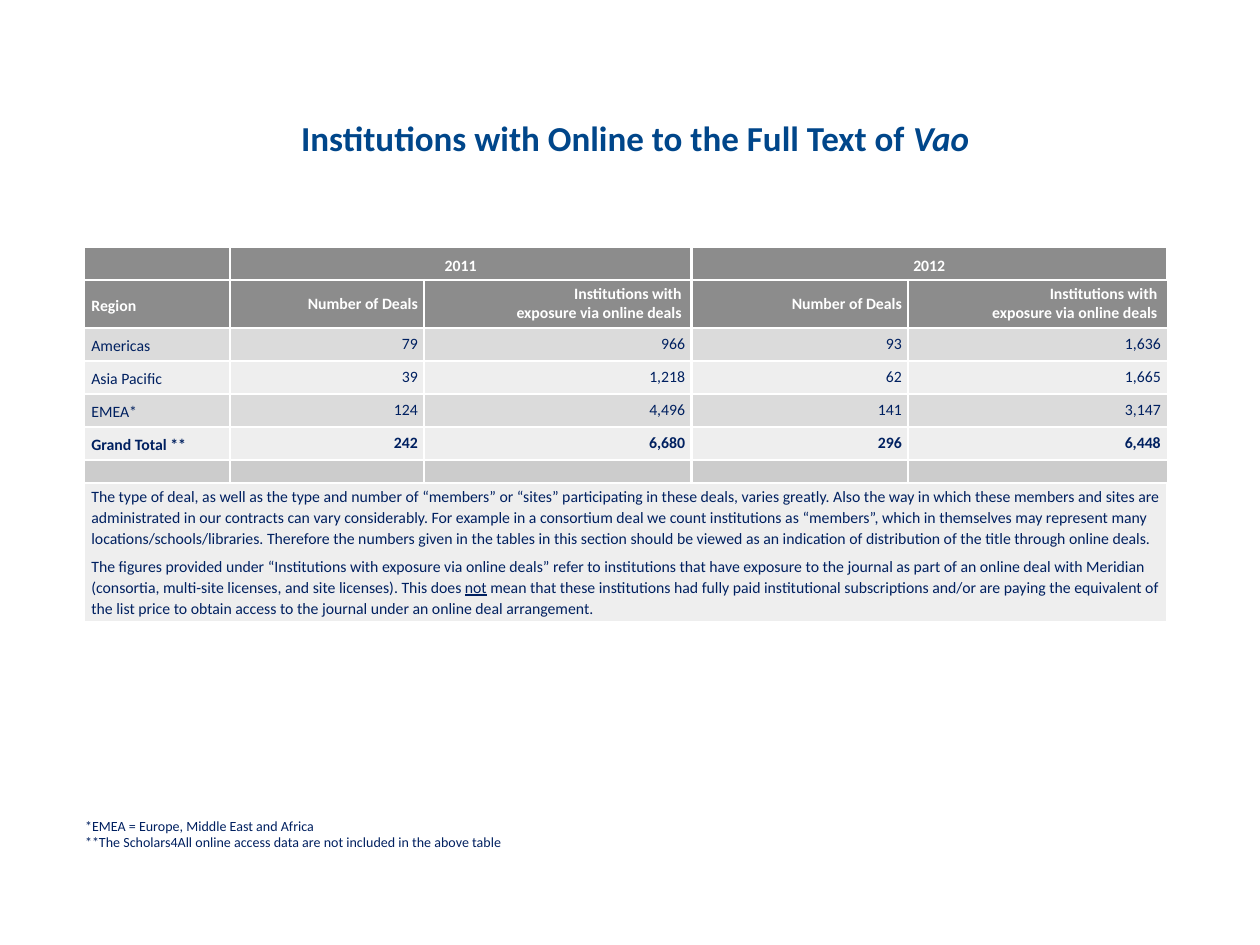
from lxml import etree
from pptx import Presentation
from pptx.dml.color import RGBColor
from pptx.enum.text import MSO_ANCHOR as Anchor, PP_ALIGN as Align
from pptx.oxml.ns import qn
from pptx.util import Pt

COLORS = {
    "title": "00468A", "navy": "002060", "white": "FFFFFF",
    "header": "8C8C8C", "dark": "DBDBDB", "light": "EEEEEE", "spacer": "CCCCCC",
}
COLUMN_WIDTHS = [82.8, 110.9, 152.8, 123.8, 148]
ROW_HEIGHTS = [18.2, 27.5, 18.8, 18.8, 18.8, 18.8, 13.2, 77.8]
MEASURES = ["Number of Deals", "Institutions with \nexposure via online deals "]
REGIONS = [
    ["Americas", "79", "966", "93", "1,636"],
    ["Asia Pacific", "39", "1,218", "62", "1,665"],
    ["EMEA*", "124", "4,496", "141", "3,147"],
    ["Grand Total **", "242", "6,680", "296", "6,448"],
]
NOTES = [
    [("The type of deal, as well as the type and number of “members” or “sites” "
      "participating in these deals, varies greatly. Also the way in which these members "
      "and sites are administrated in our contracts can vary considerably. For example in "
      "a consortium deal we count institutions as “members”, which in themselves may "
      "represent many locations/schools/libraries. Therefore the numbers given in the "
      "tables in this section should be viewed as an indication of distribution of the "
      "title through online deals.", {})],
    [("The figures provided under “Institutions with exposure via online deals” refer to "
      "institutions that have exposure to the journal as part of an online deal with "
      "Meridian (consortia, multi-site licenses, and site licenses). This does ", {}),
     ("not", {"underline": True}),
     (" mean that these institutions had fully paid institutional subscriptions and/or are "
      "paying the equivalent of the list price to obtain access to the journal under an "
      "online deal arrangement.", {})],
]
FOOTNOTES = [
    [("*EMEA = Europe, Middle East and Africa", {})],
    [("**The Scholars4All online access data are not included in the above table", {})],
]


def write_text(frame, paragraphs, size=9, color="navy", bold=False, align=Align.LEFT,
               line_spacing=None, gap=0):
    """Write paragraphs, each a list of (text, extra font settings) runs."""
    for index, runs in enumerate(paragraphs):
        paragraph = frame.add_paragraph() if index else frame.paragraphs[0]
        paragraph.alignment = align
        if line_spacing:
            paragraph.line_spacing = line_spacing
        if gap and index < len(paragraphs) - 1:
            paragraph.space_after = Pt(gap)
        for text, extra in runs:
            for number, line in enumerate(text.split("\n")):
                if number:
                    paragraph.add_line_break()
                run = paragraph.add_run()
                run.text = line
                font = run.font
                font.name, font.size, font.bold = "Calibri", Pt(size), bold
                font.color.rgb = RGBColor.from_string(COLORS[color])
                for name, value in extra.items():
                    setattr(font, name, value)


def add_text_box(slide, box, paragraphs, margins=None, anchor=Anchor.TOP, **text_format):
    frame = slide.shapes.add_textbox(*map(Pt, box)).text_frame
    frame.word_wrap = True
    frame.vertical_anchor = anchor
    if margins is not None:
        frame.margin_left = frame.margin_right = Pt(margins)
        frame.margin_top = frame.margin_bottom = Pt(margins)
    write_text(frame, paragraphs, **text_format)


def style_cell(cell, fill, inner_sides):
    """Fill the cell and rule white lines on its inner sides only."""
    cell.vertical_anchor = Anchor.MIDDLE
    cell.margin_left = cell.margin_right = Pt(3.6)
    cell.margin_top = cell.margin_bottom = Pt(1.4)
    cell.text_frame.paragraphs[0].font.size = Pt(8)
    properties = cell._tc.get_or_add_tcPr()
    for side, inner in inner_sides.items():
        line = etree.SubElement(properties, qn(f"a:{side}"), w=str(Pt(1.5)))
        if inner:
            solid = etree.SubElement(line, qn("a:solidFill"))
            etree.SubElement(solid, qn("a:srgbClr"), val=COLORS["white"])
        else:
            etree.SubElement(line, qn("a:noFill"))
    cell.fill.solid()
    cell.fill.fore_color.rgb = RGBColor.from_string(COLORS[fill])


def fill_row(table, row, values, **text_format):
    """Write a region name on the left and right-aligned values after it."""
    for column, value in enumerate(values):
        layout = {"align": Align.RIGHT} if column else {"line_spacing": 1.2}
        write_text(table.cell(row, column).text_frame, [[(value, {})]],
                   **layout, **text_format)


def add_deals_table(slide, left, top):
    rows, columns = len(ROW_HEIGHTS), len(COLUMN_WIDTHS)
    table = slide.shapes.add_table(rows, columns, Pt(left), Pt(top), Pt(sum(COLUMN_WIDTHS)),
                                   Pt(sum(ROW_HEIGHTS))).table
    for column, width in zip(table.columns, COLUMN_WIDTHS):
        column.width = Pt(width)
    fills = ["header"] * 2 + ["dark", "light"] * 2 + ["spacer", "light"]
    for index, (row, height, fill) in enumerate(zip(table.rows, ROW_HEIGHTS, fills)):
        row.height = Pt(height)
        for position, cell in enumerate(row.cells):
            style_cell(cell, fill, {"lnL": position > 0, "lnR": position < columns - 1,
                                    "lnT": index > 0, "lnB": index < rows - 1})

    for column, year in ((1, "2011"), (3, "2012")):
        cell = table.cell(0, column)
        cell.merge(table.cell(0, column + 1))
        write_text(cell.text_frame, [[(year, {})]], color="white", bold=True,
                   align=Align.CENTER, line_spacing=1.2)
    fill_row(table, 1, ["Region"] + MEASURES * 2, color="white", bold=True)
    for row, values in enumerate(REGIONS, start=2):
        fill_row(table, row, values, bold=values is REGIONS[-1])

    notes = table.cell(rows - 1, 0)
    notes.merge(table.cell(rows - 1, columns - 1))
    write_text(notes.text_frame, NOTES, line_spacing=1.1, gap=4)


def main():
    presentation = Presentation()
    presentation.slide_width, presentation.slide_height = Pt(720), Pt(540)
    slide = presentation.slides.add_slide(presentation.slide_layouts[6])
    add_deals_table(slide, 48.6, 141.8)
    add_text_box(slide, (48.6, 466.9, 617, 19.4), FOOTNOTES, margins=0,
                 anchor=Anchor.MIDDLE, size=8)
    title = [("Institutions with Online to the Full Text of ", {}), ("Vao", {"italic": True})]
    add_text_box(slide, (95.8, 63, 534.2, 31.7), [title], size=20, color="title",
                 bold=True, align=Align.CENTER)
    presentation.save("out.pptx")


if __name__ == "__main__":
    main()
